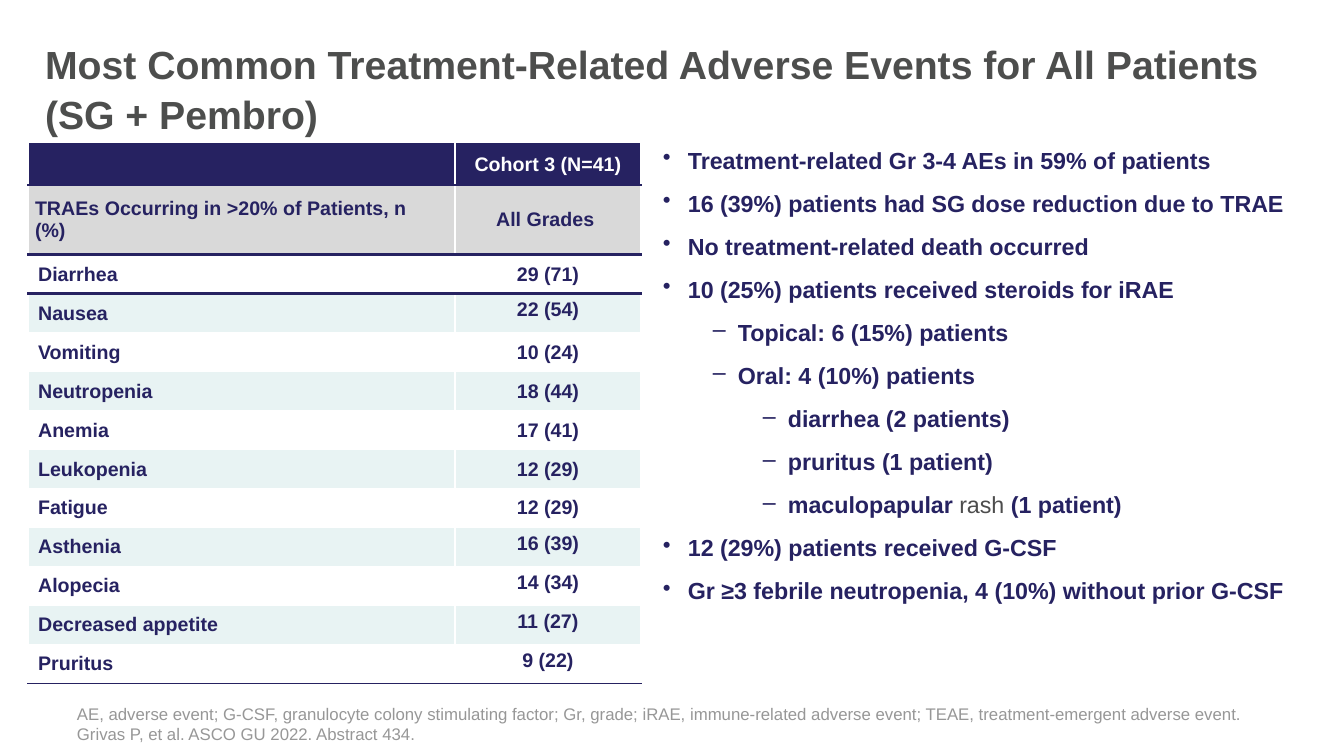
"""Build the slide on treatment-related adverse events."""
import pptx
import pptx.chart.data
import pptx.dml.color
import pptx.enum.text
import pptx.oxml
import pptx.oxml.ns
import pptx.util
from lxml import etree

SCALE = 914400 / 100.8
HUES = {"navy": "262261", "title": "4D4E4D", "rash": "4D4D4D", "note": "979797",
        "white": "FFFFFF", "grey": "D9D9D9", "mint": "E8F3F3"}
ALIGN = pptx.enum.text.PP_ALIGN
ANCHOR = pptx.enum.text.MSO_ANCHOR


def px(*sizes):
    return [pptx.util.Emu(round(size * SCALE)) for size in sizes]


def write(para, text, size, hue, bold=True):
    run = para.add_run()
    run.text = text
    run.font.name = "Arial"
    run.font.size = pptx.util.Pt(size)
    run.font.bold = bold
    run.font.color.rgb = pptx.dml.color.RGBColor.from_string(HUES[hue])


deck = pptx.Presentation()
deck.slide_width, deck.slide_height = px(1344, 756)
slide = deck.slides.add_slide(deck.slide_layouts[5])

title = slide.shapes.title
title.left, title.top, title.width, title.height = px(35, 22, 1263, 131)
frame = title.text_frame
frame.word_wrap = True
frame.auto_size = pptx.enum.text.MSO_AUTO_SIZE.NONE
frame.vertical_anchor = ANCHOR.MIDDLE
para = frame.paragraphs[0]
para.alignment = ALIGN.LEFT
para.line_spacing = 1.05
write(para, "Most Common Treatment-Related Adverse Events for All Patients (SG + Pembro)",
      28, "title")

rows = [
    ("", "Cohort 3 (N=41)"),
    ("TRAEs Occurring in >20% of Patients, n (%)", "All Grades "),
    ("Diarrhea", "29 (71)"),
    ("Nausea", "22 (54)"),
    ("Vomiting", "10 (24)"),
    ("Neutropenia", "18 (44)"),
    ("Anemia", "17 (41)"),
    ("Leukopenia", "12 (29)"),
    ("Fatigue", "12 (29)"),
    ("Asthenia", "16 (39)"),
    ("Alopecia", "14 (34)"),
    ("Decreased appetite", "11 (27)"),
    ("Pruritus", "9 (22)"),
]
high = {"Nausea", "Asthenia", "Alopecia", "Decreased appetite", "Pruritus"}
last = len(rows) - 1
fills = ["navy", "grey"] + ["white", "mint"] * 6
rules = [("navy", 2.25)] * 4 + [("white", 1)] * (last - 3) + [("navy", 1)]

table = slide.shapes.add_table(len(rows), 2, *px(28, 144, 613, 538)).table
table.first_row = table.horz_banding = False
for col, width in zip(table.columns, px(427, 186)):
    col.width = width
for i, row in enumerate(rows):
    table.rows[i].height = px(70 if i == 1 else 39)[0]
    for j, text in enumerate(row):
        cell = table.cell(i, j)
        top = j == 1 and row[0] in high
        cell.vertical_anchor = ANCHOR.TOP if top else ANCHOR.MIDDLE
        para = cell.text_frame.paragraphs[0]
        para.alignment = ALIGN.CENTER if j else ALIGN.LEFT
        if text:
            write(para, text, 14, "navy" if i else "white")
        props = cell._tc.get_or_add_tcPr()
        edges = {"L": ("white", 1), "R": ("white", 1), "T": rules[i], "B": rules[i + 1]}
        for side, (hue, weight) in edges.items():
            line = etree.SubElement(props, pptx.oxml.ns.qn("a:ln" + side),
                                    w=str(pptx.util.Pt(weight)))
            paint = etree.SubElement(line, pptx.oxml.ns.qn("a:solidFill"))
            etree.SubElement(paint, pptx.oxml.ns.qn("a:srgbClr"), val=HUES[hue])
        cell.fill.solid()
        cell.fill.fore_color.rgb = pptx.dml.color.RGBColor.from_string(HUES[fills[i]])
lead = table.cell(1, 0)
lead.margin_left, lead.margin_top, lead.margin_right, lead.margin_bottom = px(7, 7, 13, 7)

points = [
    (0, ["Treatment-related Gr 3-4 AEs in 59% of patients"]),
    (0, ["16 (39%) patients had SG dose reduction due to TRAE"]),
    (0, ["No treatment-related death occurred"]),
    (0, ["10 (25%) patients received steroids for iRAE"]),
    (1, ["Topical: 6 (15%) patients"]),
    (1, ["Oral: 4 (10%) patients"]),
    (2, ["diarrhea (2 patients)"]),
    (2, ["pruritus (1 patient)"]),
    (2, ["maculopapular ", "rash ", "(1 patient)"]),
    (0, ["12 (29%) patients received G-CSF"]),
    (0, ["Gr ≥3 febrile neutropenia, 4 (10%) without prior G-CSF"]),
]
frame = slide.shapes.add_textbox(*px(653, 144, 674, 495)).text_frame
frame.word_wrap = True
for i, (level, parts) in enumerate(points):
    para = frame.add_paragraph() if i else frame.paragraphs[0]
    para.level = level
    props = para._p.get_or_add_pPr()
    left, hang = px(25 + 50 * level, -25)
    props.set("marL", str(left))
    props.set("indent", str(hang))
    etree.SubElement(props, pptx.oxml.ns.qn("a:buChar"), char="–" if level else "•")
    para.line_spacing = 0.9
    para.space_before = pptx.util.Pt(6.4 if i else 0)
    para.space_after = pptx.util.Pt(6.4)
    for part in parts:
        rash = part == "rash "
        write(para, part, 16.6, "rash" if rash else "navy", not rash)

notes = [
    "AE, adverse event; G-CSF, granulocyte colony stimulating factor; Gr, grade; "
    "iRAE, immune-related adverse event; TEAE, treatment-emergent adverse event.",
    "Grivas P, et al. ASCO GU 2022. Abstract 434.",
]
frame = slide.shapes.add_textbox(*px(67, 701, 1231, 48)).text_frame
frame.word_wrap = True
frame.vertical_anchor = ANCHOR.BOTTOM
for i, note in enumerate(notes):
    para = frame.add_paragraph() if i else frame.paragraphs[0]
    write(para, note, 12, "note", False)

deck.save("out.pptx")
